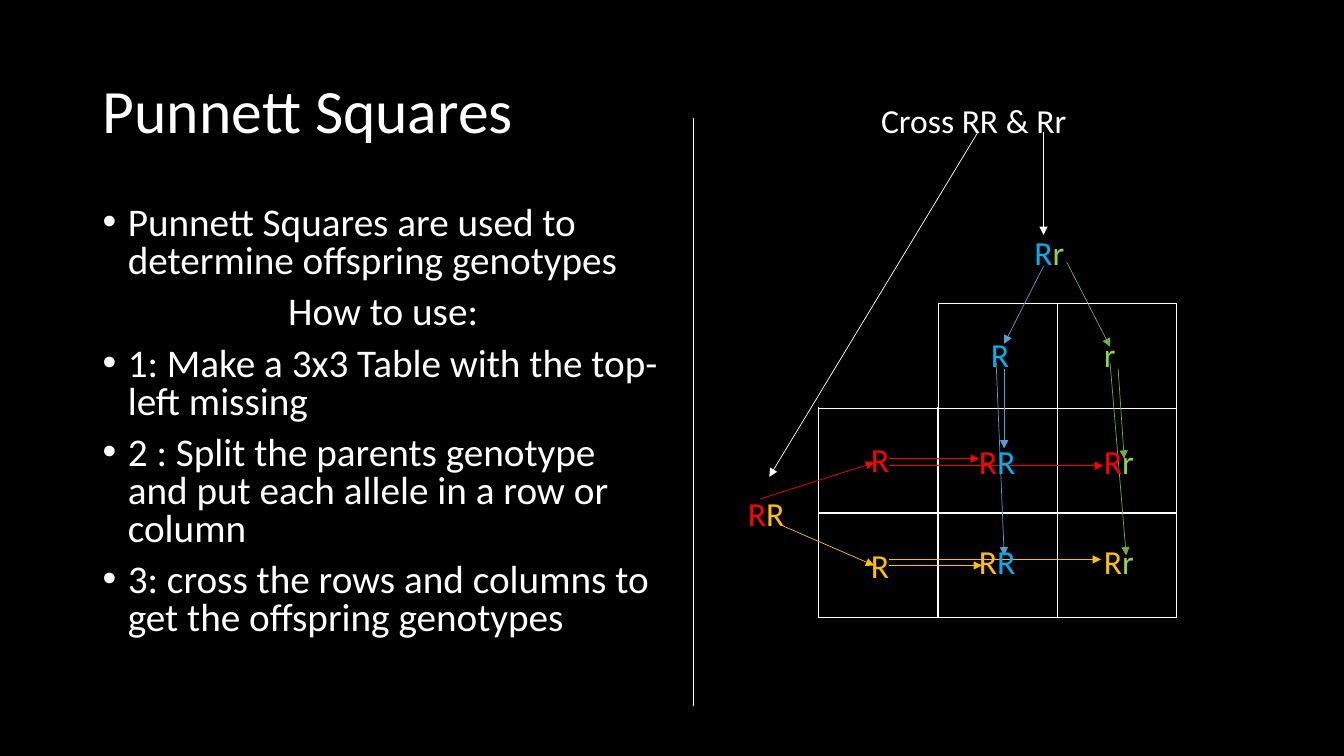
from lxml import etree
from pptx import Presentation
from pptx.dml.color import RGBColor
from pptx.enum.shapes import MSO_CONNECTOR, MSO_SHAPE
from pptx.enum.text import MSO_ANCHOR, MSO_AUTO_SIZE, PP_ALIGN
from pptx.oxml.ns import qn
from pptx.util import Inches, Pt

STRAIGHT = MSO_CONNECTOR.STRAIGHT
RECTANGLE = MSO_SHAPE.RECTANGLE
LEFT, CENTER = PP_ALIGN.LEFT, PP_ALIGN.CENTER
TOP, MIDDLE = MSO_ANCHOR.TOP, MSO_ANCHOR.MIDDLE
GROW, FIXED = MSO_AUTO_SIZE.SHAPE_TO_FIT_TEXT, MSO_AUTO_SIZE.NONE

BLACK, WHITE = "000000", "FFFFFF"
RED, GOLD, BLUE, GREEN = "FF0000", "FFC000", "00B0F0", "92D050"
BLUE_LINE, GREEN_LINE = "5B9BD5", "70AD47"


def color(hex_value):
    return RGBColor.from_string(hex_value)


class SlideBuilder:
    font = "Calibri"

    def __init__(self, slide):
        self.slide = slide
        slide.background.fill.solid()
        slide.background.fill.fore_color.rgb = color(BLACK)

    def run(self, paragraph, text, size, hex_value=WHITE):
        run = paragraph.add_run()
        run.text = text
        run.font.name = self.font
        run.font.size = Pt(size)
        run.font.color.rgb = color(hex_value)

    def frame(self, shape, fit, anchor=TOP):
        frame = shape.text_frame
        frame.word_wrap = True
        frame.auto_size = fit
        frame.vertical_anchor = anchor
        return frame

    def title(self, text, left, top, width, height):
        heading = self.slide.shapes.title
        heading.left, heading.top = Inches(left), Inches(top)
        heading.width, heading.height = Inches(width), Inches(height)
        paragraph = self.frame(heading, FIXED, MIDDLE).paragraphs[0]
        paragraph.alignment = LEFT
        paragraph.line_spacing = 0.9
        self.run(paragraph, text, 44)

    def text_box(self, left, top, width, height):
        return self.slide.shapes.add_textbox(
            Inches(left), Inches(top), Inches(width), Inches(height))

    def body(self, items, left, top, width, height):
        frame = self.frame(self.text_box(left, top, width, height), FIXED)
        for index, (text, bulleted) in enumerate(items):
            paragraph = frame.add_paragraph() if index else frame.paragraphs[0]
            paragraph.alignment = LEFT if bulleted else CENTER
            paragraph.line_spacing = 0.8
            paragraph.space_before = Pt(10)
            if bulleted:
                properties = paragraph._p.get_or_add_pPr()
                properties.set("marL", str(Inches(0.25)))
                properties.set("indent", str(-Inches(0.25)))
                etree.SubElement(properties, qn("a:buFont"), typeface="Arial")
                etree.SubElement(properties, qn("a:buChar"), char="•")
            self.run(paragraph, text, 28)

    def label(self, left, top, runs, width=2.38):
        frame = self.frame(self.text_box(left, top, width, 0.5), GROW)
        for text, hex_value in runs:
            self.run(frame.paragraphs[0], text, 24, hex_value)

    def line(self, start, end, hex_value, arrow=True):
        connector = self.slide.shapes.add_connector(
            STRAIGHT, *(Inches(value) for value in (*start, *end)))
        connector.line.width = Pt(0.5)
        connector.line.color.rgb = color(hex_value)
        etree.SubElement(connector._element.spPr, qn("a:effectLst"))
        if arrow:
            etree.SubElement(connector.line._get_or_add_ln(),
                             qn("a:tailEnd"), type="triangle")

    def rectangle(self, left, top, width, height, hex_value):
        shape = self.slide.shapes.add_shape(
            RECTANGLE, Inches(left), Inches(top), Inches(width), Inches(height))
        shape.shadow.inherit = False
        shape.fill.solid()
        shape.fill.fore_color.rgb = color(hex_value)
        shape.line.color.rgb = color(hex_value)
        shape.line.width = Pt(1)

    def grid(self, size, left, top, width, height):
        table = self.slide.shapes.add_table(
            size, size, Inches(left), Inches(top),
            Inches(width), Inches(height)).table
        table.first_row = table.horz_banding = False
        for cell in table.iter_cells():
            properties = cell._tc.get_or_add_tcPr()
            for side in ("a:lnL", "a:lnR", "a:lnT", "a:lnB"):
                border = etree.SubElement(properties, qn(side), w=str(Pt(1)))
                fill = etree.SubElement(border, qn("a:solidFill"))
                etree.SubElement(fill, qn("a:srgbClr"), val=WHITE)
            cell.fill.background()


def main():
    prs = Presentation()
    prs.slide_width, prs.slide_height = Inches(13.33), Inches(7.5)
    page = SlideBuilder(prs.slides.add_slide(prs.slide_layouts[5]))

    # Title and instructions
    page.title("Punnett Squares", 0.92, 0.4, 11.5, 1.45)
    page.body([
        ("Punnett Squares are used to determine offspring genotypes", True),
        ("How to use:", False),
        ("1: Make a 3x3 Table with the top-left missing", True),
        ("2 : Split the parents genotype and put each allele in a row or column", True),
        ("3: cross the rows and columns to get the offspring genotypes", True),
    ], 0.92, 2, 5.76, 4.76)

    # Square with its top-left cell covered
    page.grid(3, 8.12, 3.01, 3.55, 3.12)
    page.rectangle(6.79, 2.34, 2.51, 1.69, BLACK)
    page.line((6.88, 1.17), (6.88, 7), WHITE, arrow=False)

    # Parents
    page.label(8.64, 0.94, [("Cross RR & Rr", WHITE)])
    page.label(7.32, 4.84, [("R", RED), ("R", GOLD)])
    page.label(10.16, 2.25, [("R", BLUE), ("r", GREEN)])

    # Arrows from the cross to the parents, the alleles and the offspring
    for start, end, hex_value in [
        ((9.7, 1.31), (7.63, 4.73), WHITE),
        ((10.35, 1.31), (10.35, 2.33), WHITE),
        ((7.54, 4.95), (8.67, 4.59), RED),
        ((7.77, 5.22), (8.67, 5.61), GOLD),
        ((10.35, 2.64), (9.96, 3.41), BLUE_LINE),
        ((10.58, 2.6), (11.01, 3.44), GREEN_LINE),
        ((8.82, 4.55), (9.71, 4.55), RED),
        ((9.96, 3.66), (9.96, 4.45), BLUE_LINE),
        ((9.88, 3.6), (9.96, 5.51), BLUE_LINE),
        ((8.82, 5.61), (9.74, 5.61), GOLD),
        ((11.09, 3.66), (11.15, 4.55), GREEN_LINE),
        ((11.01, 3.6), (11.17, 5.51), GREEN_LINE),
        ((8.82, 4.62), (10.94, 4.62), RED),
        ((8.82, 5.55), (10.92, 5.55), GOLD),
    ]:
        page.line(start, end, hex_value)

    # Row alleles with the offspring of each row
    for row_color, allele_top, offspring_top in [(RED, 4.31, 4.33), (GOLD, 5.36, 5.32)]:
        page.label(8.54, allele_top, [("R", row_color)], 0.34)
        page.label(9.61, offspring_top, [("R", row_color), ("R", BLUE)], 0.59)
        page.label(10.85, offspring_top, [("R", row_color), ("r", GREEN)])

    # Column alleles
    page.label(9.73, 3.26, [("R", BLUE)])
    page.label(10.85, 3.26, [("r", GREEN)])

    prs.save("out.pptx")


if __name__ == "__main__":
    main()
